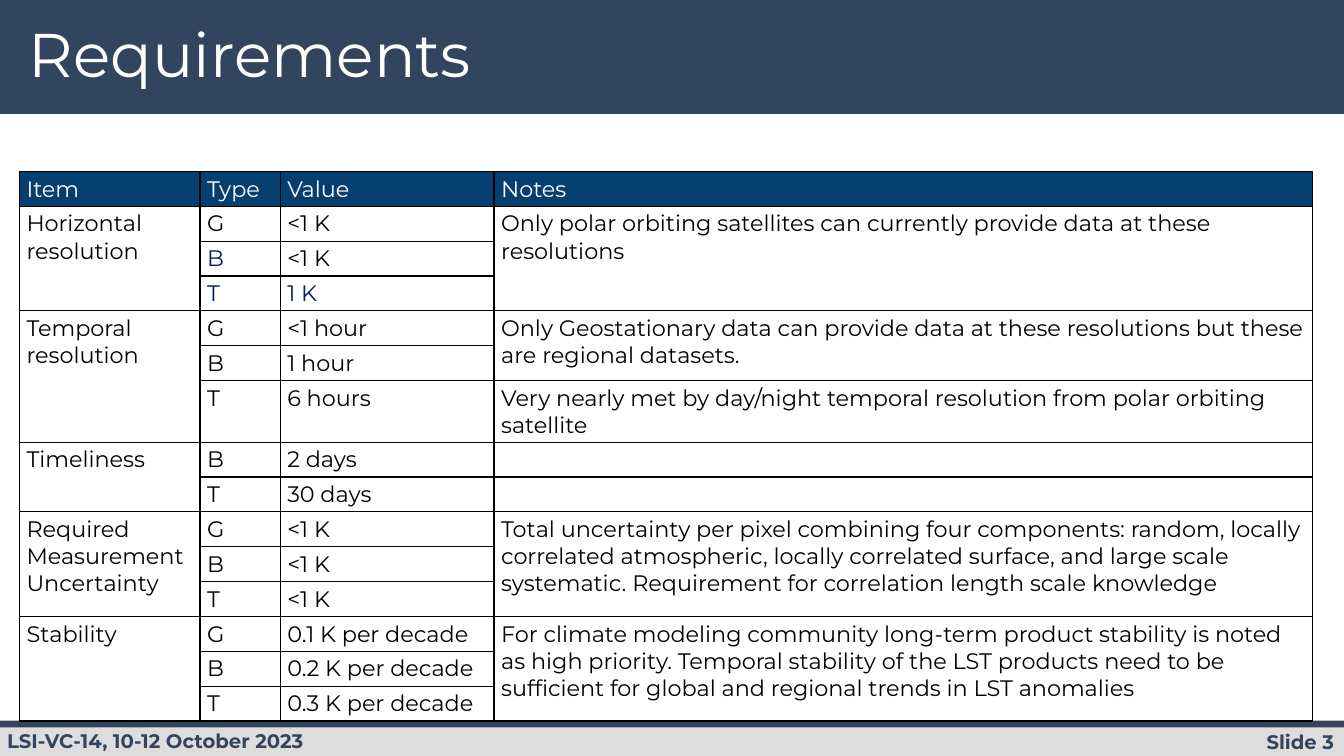
from dataclasses import dataclass

from lxml import etree
from pptx import Presentation
from pptx.dml.color import RGBColor
from pptx.enum.shapes import MSO_SHAPE
from pptx.enum.text import PP_ALIGN
from pptx.oxml.ns import qn
from pptx.util import Cm, Pt

RECTANGLE = MSO_SHAPE.RECTANGLE
LEFT, RIGHT = PP_ALIGN.LEFT, PP_ALIGN.RIGHT


@dataclass(frozen=True)
class Theme:
    font: str = "Montserrat"
    navy: str = "33445F"
    header: str = "043F70"
    footer: str = "DDDDDD"
    accent: str = "041E5D"
    black: str = "000000"
    white: str = "FFFFFF"
    title_size: int = 44
    table_size: int = 16
    footer_size: int = 14
    border_width: int = 1


THEME = Theme()
SLIDE_WIDTH, SLIDE_HEIGHT = Cm(33.87), Cm(19.05)
COLUMN_WIDTHS = [4.55, 2.02, 5.39, 20.62]
ROW_HEIGHT = Cm(0.87)
HEADINGS = ["Item", "Type", "Value", "Notes"]

# Item, its (type, value) rows, and its (note, rows covered) cells
REQUIREMENTS = [
    ("Horizontal resolution",
     [("G", "<1 K"), ("B", "<1 K"), ("T", "1 K")],
     [("Only polar orbiting satellites can currently provide data at these "
       "resolutions", 3)]),
    ("Temporal resolution",
     [("G", "<1 hour"), ("B", "1 hour"), ("T", "6 hours")],
     [("Only Geostationary data can provide data at these resolutions but "
       "these are regional datasets.", 2),
      ("Very nearly met by day/night temporal resolution from polar orbiting "
       "satellite", 1)]),
    ("Timeliness",
     [("B", "2 days"), ("T", "30 days")],
     [("", 1), ("", 1)]),
    ("Required Measurement Uncertainty",
     [("G", "<1 K"), ("B", "<1 K"), ("T", "<1 K")],
     [("Total uncertainty per pixel combining four components: random, "
       "locally correlated atmospheric, locally correlated surface, and large "
       "scale systematic. Requirement for correlation length scale knowledge",
       3)]),
    ("Stability",
     [("G", "0.1 K per decade"), ("B", "0.2 K per decade"),
      ("T", "0.3 K per decade")],
     [("For climate modeling community long-term product stability is noted "
       "as high priority. Temporal stability of the LST products need to be "
       "sufficient for global and regional trends in LST anomalies", 3)]),
]
ACCENTED_CELLS = {(2, 1), (3, 1), (3, 2)}


def write_text(text_frame, text, *, size, color, bold=False, align=LEFT,
               line_spacing=None):
    text_frame.word_wrap = True
    paragraph = text_frame.paragraphs[0]
    paragraph.alignment = align
    if line_spacing:
        paragraph.line_spacing = line_spacing
    if not text:
        # An empty cell still needs its type size to keep the row height
        etree.SubElement(paragraph._p, qn("a:endParaRPr"), sz=str(size * 100))
        return
    run = paragraph.add_run()
    run.text = text
    run.font.name = THEME.font
    run.font.size = Pt(size)
    run.font.bold = bold
    run.font.color.rgb = RGBColor.from_string(color)


def add_band(slide, top, height, color):
    """Add a plain bar across the full width of the slide."""
    band = slide.shapes.add_shape(RECTANGLE, 0, top, SLIDE_WIDTH, height)
    band.shadow.inherit = False
    band.fill.solid()
    band.fill.fore_color.rgb = RGBColor.from_string(color)
    band.line.fill.background()


def add_label(slide, left, top, width, height, text, **text_format):
    box = slide.shapes.add_textbox(left, top, width, height)
    write_text(box.text_frame, text, **text_format)


def add_borders(cell):
    properties = cell._tc.get_or_add_tcPr()
    for index, side in enumerate(("lnL", "lnR", "lnT", "lnB")):
        line = etree.Element(qn(f"a:{side}"), w=str(Pt(THEME.border_width)))
        fill = etree.SubElement(line, qn("a:solidFill"))
        etree.SubElement(fill, qn("a:srgbClr"), val=THEME.black)
        properties.insert(index, line)


def format_cell(cell, fill):
    cell.margin_left = cell.margin_right = Cm(0.18)
    cell.margin_top = cell.margin_bottom = Cm(0.1)
    if fill:
        cell.fill.solid()
        cell.fill.fore_color.rgb = RGBColor.from_string(fill)
    else:
        cell.fill.background()
    add_borders(cell)


def fill_cell(table, row, column, text, *, rows=1, color=THEME.black):
    cell = table.cell(row, column)
    if rows > 1:
        cell.merge(table.cell(row + rows - 1, column))
    write_text(cell.text_frame, text, size=THEME.table_size, color=color)


def add_requirements_table(slide):
    row_count = 1 + sum(len(levels) for _, levels, _ in REQUIREMENTS)
    table = slide.shapes.add_table(
        row_count, len(HEADINGS), Cm(0.49), Cm(4.32),
        Cm(sum(COLUMN_WIDTHS)), ROW_HEIGHT * row_count).table
    table.first_row = table.horz_banding = False
    for column, width in zip(table.columns, COLUMN_WIDTHS):
        column.width = Cm(width)
    for index, table_row in enumerate(table.rows):
        table_row.height = ROW_HEIGHT
        for cell in table_row.cells:
            format_cell(cell, THEME.header if index == 0 else None)

    for column, heading in enumerate(HEADINGS):
        fill_cell(table, 0, column, heading, color=THEME.white)
    row = 1
    for item, levels, notes in REQUIREMENTS:
        fill_cell(table, row, 0, item, rows=len(levels))
        note_row = row
        for note, rows in notes:
            fill_cell(table, note_row, 3, note, rows=rows)
            note_row += rows
        for level in levels:
            for column, text in enumerate(level, start=1):
                accented = (row, column) in ACCENTED_CELLS
                fill_cell(table, row, column, text,
                          color=THEME.accent if accented else THEME.black)
            row += 1


def main():
    presentation = Presentation()
    presentation.slide_width = SLIDE_WIDTH
    presentation.slide_height = SLIDE_HEIGHT
    slide = presentation.slides.add_slide(presentation.slide_layouts[6])

    add_band(slide, 0, Cm(2.87), THEME.navy)
    add_band(slide, Cm(18.26), Cm(0.79), THEME.footer)
    add_band(slide, Cm(18.16), Cm(0.17), THEME.navy)

    footer_format = {"size": THEME.footer_size, "color": THEME.navy,
                     "bold": True}
    add_label(slide, Cm(28.52), Cm(18.26), Cm(5.35), Cm(0.79), "Slide 3",
              align=RIGHT, **footer_format)
    add_label(slide, Cm(-0.07), Cm(18.24), Cm(13.69), Cm(0.81),
              "LSI-VC-14, 10-12 October 2023", **footer_format)
    add_label(slide, Cm(0.48), Cm(0.48), Cm(26.09), Cm(2.16), "Requirements",
              size=THEME.title_size, color=THEME.white, line_spacing=0.9)
    add_requirements_table(slide)

    presentation.save("out.pptx")


if __name__ == "__main__":
    main()
